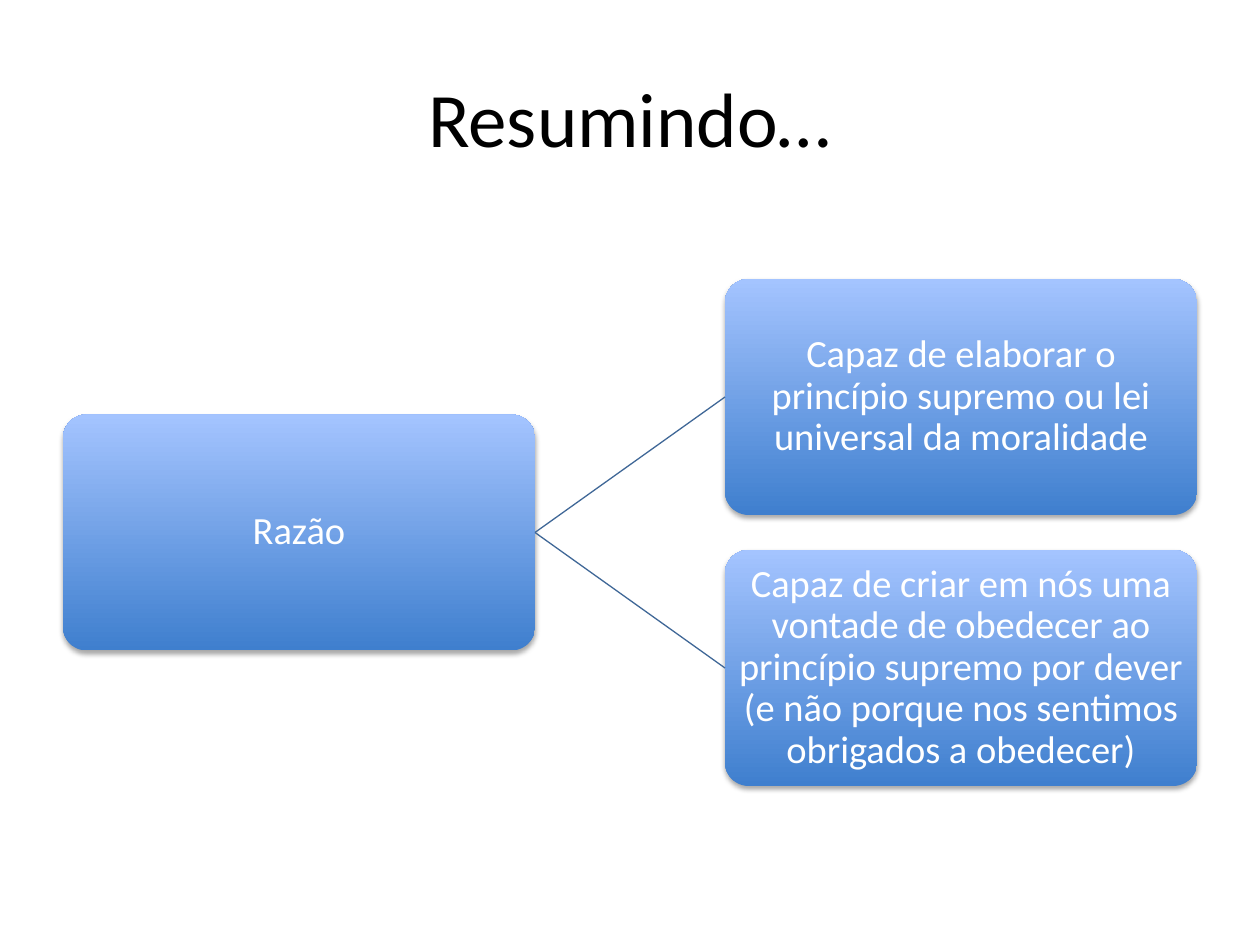
from lxml import etree
from pptx import Presentation
from pptx import util as u
from pptx.dml.color import RGBColor
from pptx.enum import shapes, text
from pptx.oxml.ns import qn

EMU_PER_PX = 914400 / 126
FONT = "Calibri"
TOP, LEFT, BOTTOM, RIGHT = range(4)  # connection sites

REASON = "Razão"
CAPACITIES = [
    "Capaz de elaborar o princípio supremo ou lei universal da moralidade",
    "Capaz de criar em nós uma vontade de obedecer ao princípio supremo "
    "por dever (e não porque nos sentimos obrigados a obedecer)",
]


def px(length):
    return u.Emu(round(length * EMU_PER_PX))


def color(hex_value):
    return RGBColor.from_string(hex_value)


def set_attributes(target, values):
    for name, value in values.items():
        setattr(target, name, value)


def write(frame, words, size, font_color, inset, line_spacing):
    margins = ("margin_left", "margin_top", "margin_right", "margin_bottom")
    set_attributes(frame, dict.fromkeys(margins, px(inset)))
    set_attributes(frame, {
        "text": words,
        "word_wrap": True,
        "auto_size": text.MSO_AUTO_SIZE.NONE,
        "vertical_anchor": text.MSO_ANCHOR.MIDDLE,
    })
    paragraph = frame.paragraphs[0]
    set_attributes(paragraph, {
        "alignment": text.PP_ALIGN.CENTER,
        "line_spacing": line_spacing,
    })
    set_attributes(paragraph.runs[0].font, {"name": FONT, "size": u.Pt(size)})
    paragraph.runs[0].font.color.rgb = color(font_color)


def add_soft_shadow(node):
    node.shadow.inherit = False
    effects = node._element.spPr.find(qn("a:effectLst"))
    shadow = etree.SubElement(
        effects, qn("a:outerShdw"), blurRad=str(u.Pt(3.1)),
        dist=str(u.Pt(1.8)), dir="5400000", rotWithShape="0")
    black = etree.SubElement(shadow, qn("a:srgbClr"), val="000000")
    etree.SubElement(black, qn("a:alpha"), val="35000")


def add_node(slide, words, x, y, width, height):
    node = slide.shapes.add_shape(
        shapes.MSO_SHAPE.ROUNDED_RECTANGLE, *map(px, (x, y, width, height)))
    node.adjustments[0] = 0.1
    # Dark at the bottom, light at the top
    node.fill.gradient()
    node.fill.gradient_angle = 90
    for stop, shade in zip(node.fill.gradient_stops, ("3F7FCE", "A4C4FF")):
        stop.color.rgb = color(shade)
    node.line.fill.background()
    add_soft_shadow(node)
    write(node.text_frame, words, 22, "FFFFFF", 2, 0.9)
    return node


def join(slide, parent, child):
    branch = slide.shapes.add_connector(shapes.MSO_CONNECTOR.STRAIGHT, 0, 0, 0, 0)
    branch.begin_connect(parent, RIGHT)
    branch.end_connect(child, LEFT)
    branch.line.width = u.Pt(0.75)
    branch.line.color.rgb = color("3F6797")
    etree.SubElement(branch._element.spPr, qn("a:effectLst"))


def add_title(slide, x, y, width, height):
    title = slide.shapes.title
    set_attributes(title, {"left": px(x), "top": px(y),
                           "width": px(width), "height": px(height)})
    write(title.text_frame, "Resumindo…", 44, "000000", 10, 1.0)


def add_hierarchy(slide, x, y, width, height):
    node_width, node_height = 472, 236
    free_height = height - node_height
    step = free_height / (len(CAPACITIES) - 1)

    # Root, centred against its branches
    reason = add_node(slide, REASON, x, y + free_height / 2,
                      node_width, node_height)
    # Branches, right-aligned in the region
    for row, words in enumerate(CAPACITIES):
        capacity = add_node(slide, words, x + width - node_width,
                            y + row * step, node_width, node_height)
        join(slide, reason, capacity)


def main():
    deck = Presentation()
    deck.slide_width, deck.slide_height = px(1260), px(945)
    slide = deck.slides.add_slide(deck.slide_layouts.get_by_name("Title Only"))
    add_title(slide, 63, 38, 1134, 157)
    add_hierarchy(slide, 63, 279, 1134, 507)
    deck.save("out.pptx")


if __name__ == "__main__":
    main()
